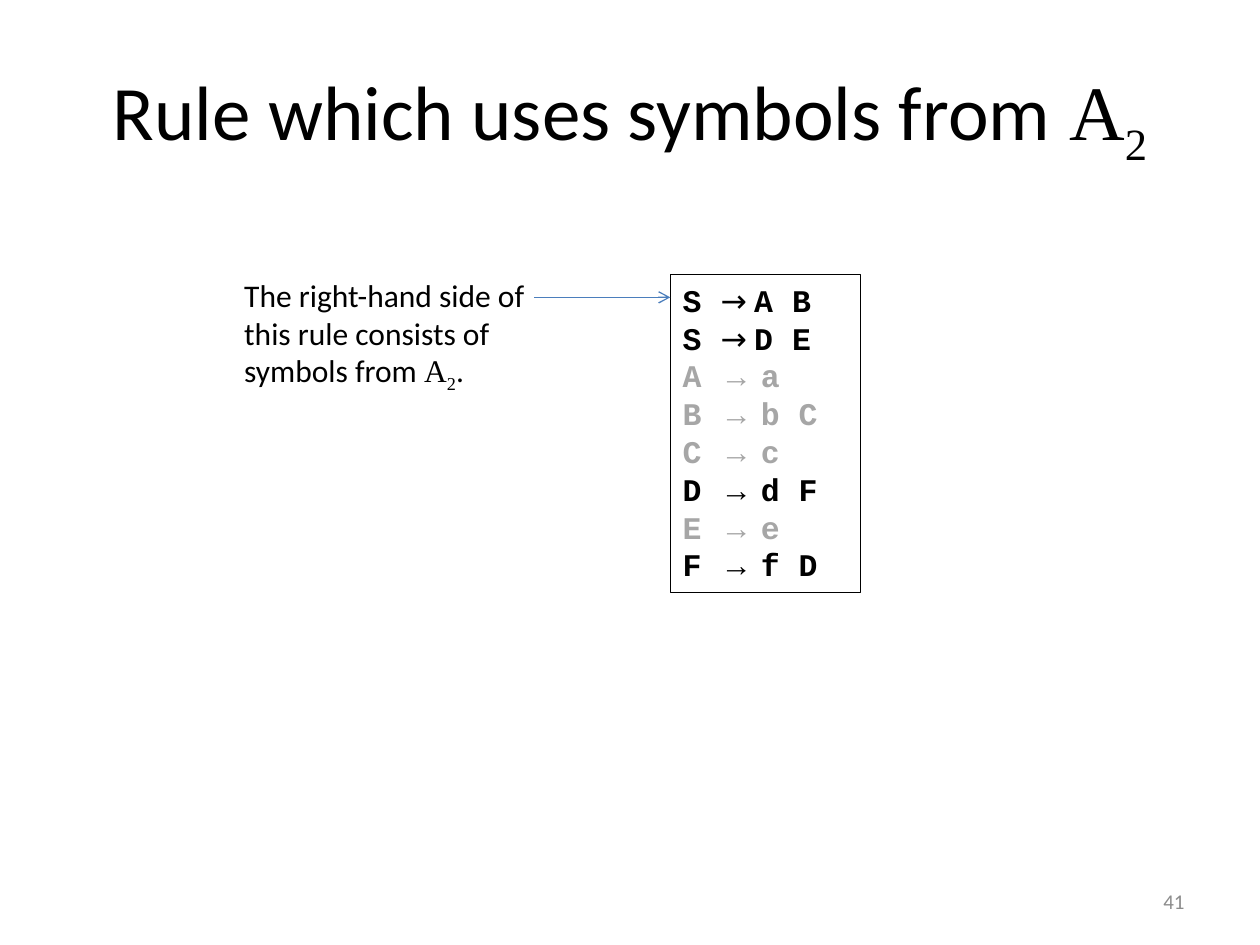
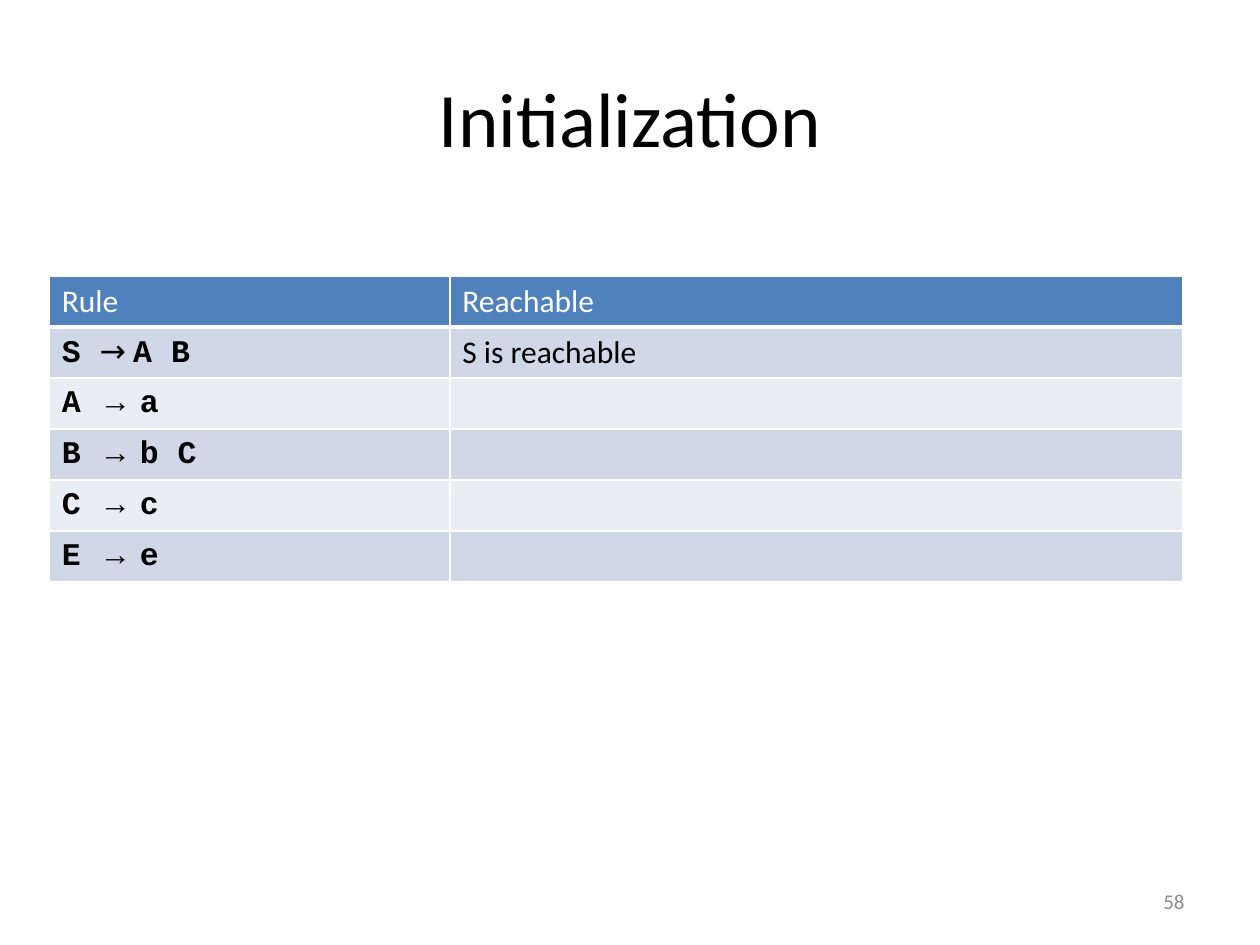
from lxml.etree import SubElement as Sub
from pptx import Presentation
from pptx.dml.color import RGBColor as Rgb
from pptx.enum.shapes import MSO_CONNECTOR as Link
from pptx.enum.text import MSO_ANCHOR as Anchor, PP_ALIGN as Align
from pptx.oxml.ns import qn
from pptx.util import Inches, Pt

HUES = {"ink": "000000", "dim": "A6A6A6", "page": "8C8C8C", "arrow": "4B7EBC",
        "white": "FFFFFF", "head": "4F81BD", "odd": "D0D8E8", "even": "E9EDF4"}
SANS, SERIF, MONO = "Calibri", "Times New Roman", "Courier New"
SET = [("A", SERIF), ("2", SERIF, True)]


def hue(name):
    """Return the named colour."""
    return Rgb.from_string(HUES[name])


def rule(text):
    """Split a grammar rule into styled parts."""
    left, right = text.split(" → ")
    face = "Roboto Condensed" if left == "S" else "Arial"
    return [(left + " ", MONO), ("→ ", face), (right, MONO)]


class Deck:
    """Hold the style and the current slide, on a grid of 100 by 75."""

    def __init__(self):
        """Open an empty deck."""
        self.prs = Presentation()
        self.prs.slide_width, self.prs.slide_height = Inches(10), Inches(7.5)
        self.unit = self.prs.slide_width / 100

    def grid(self, *cells):
        """Turn grid cells into lengths."""
        return [round(cell * self.unit) for cell in cells]

    def fill(self, para, parts, size=18, tint="ink", align=Align.LEFT):
        """Put styled parts into a paragraph."""
        para.alignment = align
        for text, face, *sub in parts:
            run = para.add_run()
            run.text = text
            font = run.font
            font.name, font.size, font.bold = face, Pt(size), face == MONO
            font.color.rgb = hue(tint)
            if sub:
                run._r.get_or_add_rPr().set("baseline", "-25000")

    def page(self, title, number):
        """Add a slide with its title and number."""
        self.slide = self.prs.slides.add_slide(self.prs.slide_layouts[5])
        head = self.slide.shapes.title
        head.left, head.top, head.width, head.height = self.grid(5, 3, 90, 12.5)
        head.text_frame.vertical_anchor = Anchor.MIDDLE
        self.fill(head.text_frame.paragraphs[0], title, 44, align=Align.CENTER)
        foot = self.text((71.7, 69.5, 23.3, 4), [(number, SANS)],
                         size=12, tint="page", align=Align.RIGHT)
        foot.text_frame.vertical_anchor = Anchor.MIDDLE

    def text(self, place, parts, **style):
        """Add a wrapped text box."""
        box = self.slide.shapes.add_textbox(*self.grid(*place))
        box.text_frame.word_wrap = True
        self.fill(box.text_frame.paragraphs[0], parts, **style)
        return box

    def rules(self, place, rows, live):
        """Add a framed list of rules, dimming those not live."""
        first, *rest = rows
        box = self.text(place, rule(first))
        box.text_frame.word_wrap = False
        box.line.color.rgb, box.line.width = hue("ink"), Pt(0.75)
        for row in rest:
            tint = "ink" if row[0] in live else "dim"
            self.fill(box.text_frame.add_paragraph(), rule(row), tint=tint)

    def arrow(self, *ends):
        """Add an arrow."""
        link = self.slide.shapes.add_connector(Link.STRAIGHT, *self.grid(*ends))
        link.line.color.rgb, link.line.width = hue("arrow"), Pt(0.75)
        Sub(link.line._get_or_add_ln(), qn("a:tailEnd"), type="arrow")
        Sub(link._element.spPr, qn("a:effectLst"))

    def cell(self, cell, parts, back, tint, base):
        """Fill and border one table cell and set its text."""
        props = cell._tc.get_or_add_tcPr()
        for side in "LRTB":
            width = base if side == "B" else 1
            edge = Sub(props, qn(f"a:ln{side}"), w=str(int(Pt(width))))
            paint = Sub(edge, qn("a:solidFill"))
            Sub(paint, qn("a:srgbClr"), val=HUES["white"])
        cell.fill.solid()
        cell.fill.fore_color.rgb = hue(back)
        self.fill(cell.text_frame.paragraphs[0], parts, tint=tint)

    def table(self, place, widths, rows):
        """Add a banded table with a header row."""
        frame = self.slide.shapes.add_table(len(rows), len(widths), *self.grid(*place))
        table = frame.table
        for col, width in zip(table.columns, self.grid(*widths)):
            col.width = width
        for i, row in enumerate(rows):
            back = "odd" if i % 2 else "even"
            look = (back, "ink", 1) if i else ("head", "white", 3)
            for j, parts in enumerate(row):
                self.cell(table.cell(i, j), parts, *look)


def main():
    """Build both slides."""
    deck = Deck()
    deck.page([("Rule which uses symbols from ", SANS), *SET], "41")
    deck.rules((53.2, 21.8, 15.1, 25.2),
               ["S → A B", "S → D E", "A → a", "B → b C",
                "C → c", "D → d F", "E → e", "F → f D"], "SDF")
    deck.arrow(42.4, 23.6, 53.2, 23.6)
    deck.text((18.4, 21.4, 28, 10.1),
              [("The right-hand side of this rule consists of symbols from ", SANS),
               *SET, (".", SANS)])

    deck.page([("Initialization", SANS)], "58")
    rows = [[[("Rule", SANS)], [("Reachable", SANS)]],
            [rule("S → A B"), [("S is reachable", SANS)]]]
    rows += [[rule(text), []] for text in ("A → a", "B → b C", "C → c", "E → e")]
    deck.table((3.9, 21.9, 90, 24.3), (31.8, 58.2), rows)
    deck.prs.save("out.pptx")


if __name__ == "__main__":
    main()
